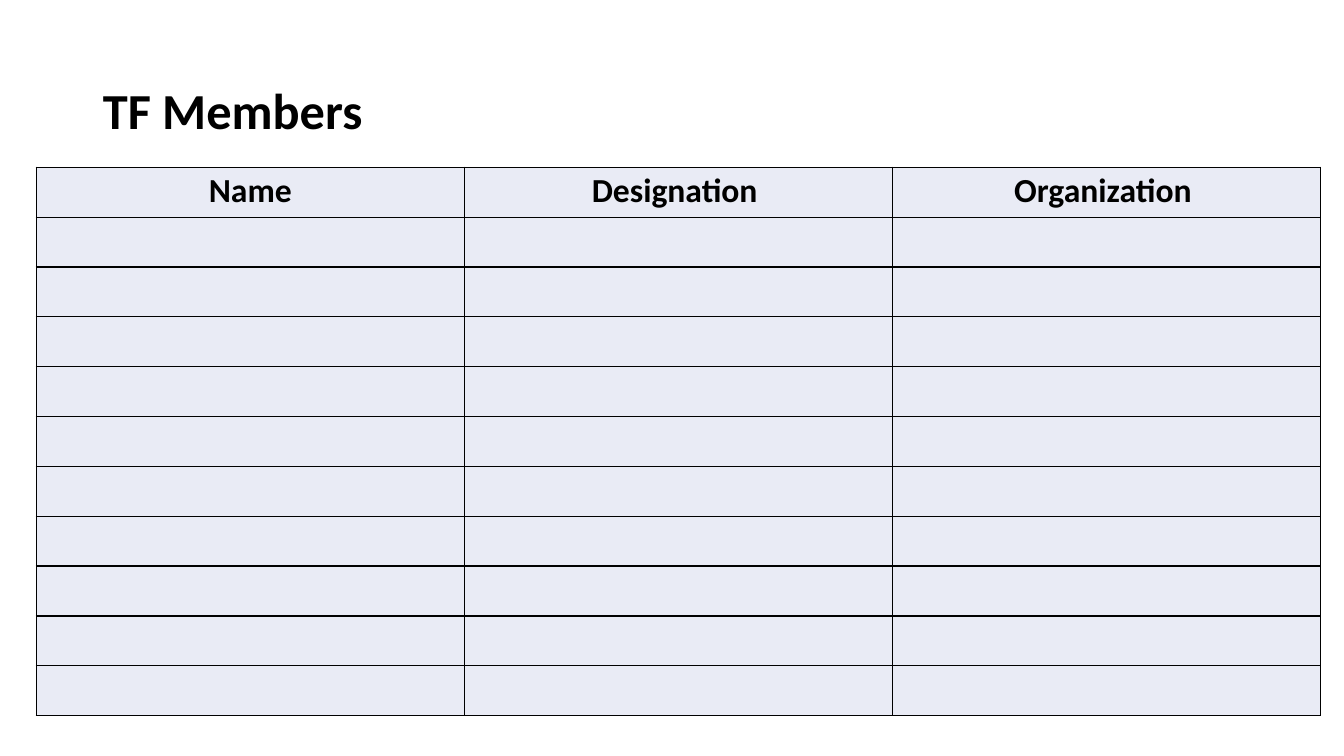
from lxml import etree
from pptx import Presentation
from pptx.dml.color import RGBColor
from pptx.enum.text import MSO_ANCHOR, PP_ALIGN
from pptx.oxml.ns import qn
from pptx.util import Inches, Pt

LEFT, CENTER = PP_ALIGN.LEFT, PP_ALIGN.CENTER
TOP, MIDDLE = MSO_ANCHOR.TOP, MSO_ANCHOR.MIDDLE
TITLE_ONLY = 5

COLORS = {"text": "000000", "border": "000000", "cell": "E9EBF5"}
FONT = "Calibri"
HEADINGS = ["Name", "Designation ", "Organization "]
MEMBER_ROWS = 10


def write_text(frame, text, size, align, spacing, after=0, anchor=TOP):
    """Fill a text frame with one bold paragraph."""
    frame.vertical_anchor = anchor
    para = frame.paragraphs[0]
    para.alignment = align
    para.line_spacing = spacing
    para.space_after = Pt(after)
    span = para.add_run()
    span.text = text
    span.font.name = FONT
    span.font.size = Pt(size)
    span.font.bold = True
    span.font.color.rgb = RGBColor.from_string(COLORS["text"])


def style_cell(cell):
    """Give a cell its fill and a thin border on every side."""
    cell.fill.solid()
    cell.fill.fore_color.rgb = RGBColor.from_string(COLORS["cell"])
    properties = cell._tc.get_or_add_tcPr()
    # Borders must come before the fill in the cell properties
    for position, side in enumerate(("lnL", "lnR", "lnT", "lnB")):
        line = etree.Element(qn(f"a:{side}"), w=str(Pt(1)))
        fill = etree.SubElement(line, qn("a:solidFill"))
        etree.SubElement(fill, qn("a:srgbClr"), val=COLORS["border"])
        properties.insert(position, line)


def add_title(page, left, top, width, height):
    box = page.shapes.title
    box.left, box.top = Inches(left), Inches(top)
    box.width, box.height = Inches(width), Inches(height)
    box.text_frame.word_wrap = True
    write_text(box.text_frame, "TF Members", size=36, align=LEFT,
               spacing=0.9, anchor=MIDDLE)


def add_members_table(page, left, top, width, height):
    row_count = MEMBER_ROWS + 1
    table = page.shapes.add_table(
        row_count, len(HEADINGS), Inches(left), Inches(top),
        Inches(width), Inches(height)).table
    table.horz_banding = False

    # Equal columns and rows
    for column in table.columns:
        column.width = Inches(width / len(HEADINGS))
    for row in table.rows:
        row.height = Inches(height / row_count)

    for cell in table.iter_cells():
        style_cell(cell)

    # Heading row
    for cell, heading in zip(table.rows[0].cells, HEADINGS):
        cell.margin_left = cell.margin_right = Inches(0.08)
        cell.margin_top = cell.margin_bottom = 0
        write_text(cell.text_frame, heading, size=24, align=CENTER,
                   spacing=1.07, after=8)


def main():
    deck = Presentation()
    deck.slide_width, deck.slide_height = Inches(13.33), Inches(7.5)
    page = deck.slides.add_slide(deck.slide_layouts[TITLE_ONLY])
    add_title(page, 0.92, 0.4, 11.5, 1.45)
    add_members_table(page, 0.36, 1.66, 12.74, 5.44)
    deck.save("out.pptx")


if __name__ == "__main__":
    main()
